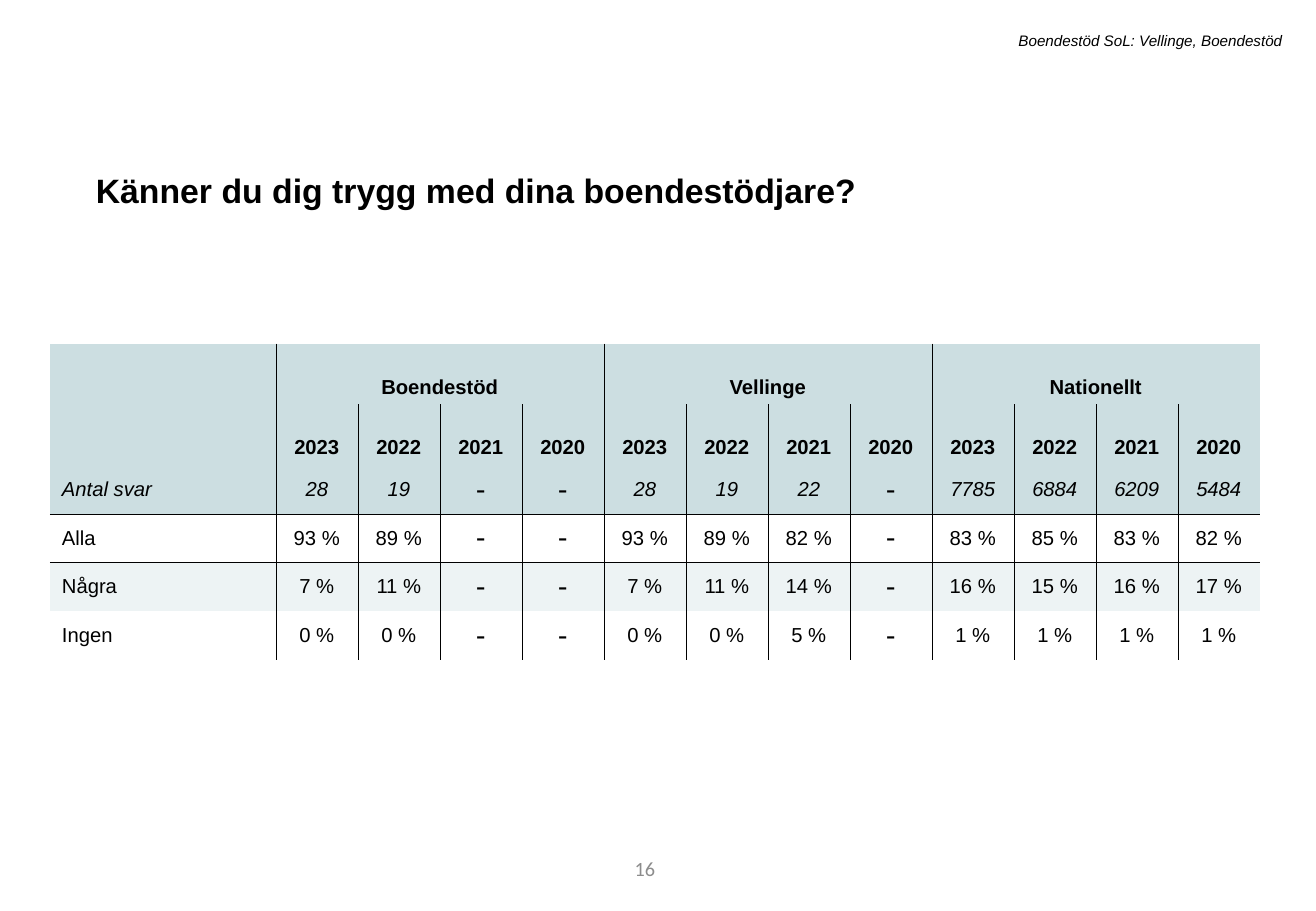
from lxml import etree
from pptx import Presentation
from pptx.dml.color import RGBColor
from pptx.enum.text import MSO_ANCHOR as ANCHOR, MSO_AUTO_SIZE as AUTO, PP_ALIGN as ALIGN
from pptx.oxml.ns import qn
from pptx.util import Inches, Pt

COLORS = {"text": "000000", "line": "000000", "number": "8C8C8C",
          "header": "CCDEE1", "band": "EDF3F4"}
NO_GRID_STYLE = "{2D5ABB26-0587-4C30-8999-92F81FD0307C}"

GROUPS = ["Boendestöd", "Vellinge", "Nationellt"]
YEARS = ["2023", "2022", "2021", "2020"]
ANSWERS = [
    ["Antal svar", "28", "19", "-", "-", "28", "19", "22", "-",
     "7785", "6884", "6209", "5484"],
    ["Alla", "93 %", "89 %", "-", "-", "93 %", "89 %", "82 %", "-",
     "83 %", "85 %", "83 %", "82 %"],
    ["Några", "7 %", "11 %", "-", "-", "7 %", "11 %", "14 %", "-",
     "16 %", "15 %", "16 %", "17 %"],
    ["Ingen", "0 %", "0 %", "-", "-", "0 %", "0 %", "5 %", "-",
     "1 %", "1 %", "1 %", "1 %"],
]
ROW_HEIGHTS = [0.5, 0.5, 0.4, 0.4, 0.4, 0.4]
ROW_FILLS = ["header", "header", "header", None, "band", None]
LABEL_WIDTH, VALUE_WIDTH = 1.86, 0.675
COUNT_ROW = 2


def add_run(p, text, size, font="Arial", color="text", bold=False, italic=False):
    r = p.add_run()
    r.text = text
    r.font.size, r.font.name = Pt(size), font
    r.font.bold, r.font.italic = bold, italic
    r.font.color.rgb = RGBColor.from_string(COLORS[color])


def add_text(slide, box, text, size, align=ALIGN.LEFT, anchor=ANCHOR.TOP,
             auto_size=AUTO.SHAPE_TO_FIT_TEXT, **style):
    sp = slide.shapes.add_textbox(*map(Inches, box))
    tf = sp.text_frame
    tf.word_wrap = True
    tf.auto_size = auto_size
    tf.vertical_anchor = anchor
    p = tf.paragraphs[0]
    p.alignment = align
    add_run(p, text, size, **style)
    return p


def set_borders(cell, sides):
    """Draw thin lines on the given sides, a subset of L, R, T and B in that order."""
    tc_pr = cell._tc.get_or_add_tcPr()
    for i, side in enumerate(sides):
        ln = etree.Element(qn(f"a:ln{side}"), w=str(Pt(0.25)))
        fill = etree.SubElement(ln, qn("a:solidFill"))
        etree.SubElement(fill, qn("a:srgbClr"), val=COLORS["line"])
        tc_pr.insert(i, ln)


def border_sides(row, col):
    # The top row is divided only between groups
    step = len(YEARS) if row == 0 else 1
    last = len(GROUPS) * len(YEARS)
    sides = ""
    if col > 0 and (col - 1) % step == 0:
        sides += "L"
    if col < last and col % step == 0:
        sides += "R"
    if row == COUNT_ROW + 1:
        sides += "T"
    if row == COUNT_ROW:
        sides += "B"
    return sides


def fill_cell(cell, text, row, col):
    cell.margin_top = cell.margin_bottom = Inches(0.05)
    is_heading = row < COUNT_ROW
    cell.vertical_anchor = ANCHOR.BOTTOM if is_heading else ANCHOR.MIDDLE
    if ROW_FILLS[row]:
        cell.fill.solid()
        cell.fill.fore_color.rgb = RGBColor.from_string(COLORS[ROW_FILLS[row]])
    else:
        cell.fill.background()
    set_borders(cell, border_sides(row, col))
    if not text:
        return
    p = cell.text_frame.paragraphs[0]
    p.alignment = ALIGN.CENTER if col else ALIGN.LEFT
    if text == "-":
        add_run(p, text, 18, font="Calibri")
    else:
        add_run(p, text, 12, bold=is_heading, italic=row == COUNT_ROW)


def add_answer_table(slide):
    group_row = [""]
    for group in GROUPS:
        group_row += [group] + [""] * (len(YEARS) - 1)
    rows = [group_row, [""] + YEARS * len(GROUPS)] + ANSWERS
    widths = [LABEL_WIDTH] + [VALUE_WIDTH] * (len(group_row) - 1)
    frame = slide.shapes.add_table(
        len(rows), len(widths), Inches(0.41), Inches(2.83),
        Inches(sum(widths)), Inches(sum(ROW_HEIGHTS)))
    table = frame.table
    table.first_row = table.horz_banding = False
    table._tbl.tblPr.find(qn("a:tableStyleId")).text = NO_GRID_STYLE
    for column, width in zip(table.columns, widths):
        column.width = Inches(width)
    for i, (height, texts) in enumerate(zip(ROW_HEIGHTS, rows)):
        table.rows[i].height = Inches(height)
        for j, text in enumerate(texts):
            fill_cell(table.cell(i, j), text, i, j)
    # Each group heading spans its years
    for first in range(1, len(widths), len(YEARS)):
        table.cell(0, first).merge(table.cell(0, first + len(YEARS) - 1))


def main():
    prs = Presentation()
    prs.slide_width, prs.slide_height = Inches(10.83), Inches(7.5)
    slide = prs.slides.add_slide(prs.slide_layouts[6])

    # Page number
    add_text(slide, (3.05, 6.95, 2.44, 0.4), "16", 12, ALIGN.RIGHT, ANCHOR.MIDDLE,
             AUTO.NONE, font="Calibri", color="number")

    # Question and survey name
    p = add_text(slide, (0.69, 1.28, 9.4, 0.47),
                 "Känner du dig trygg med dina boendestödjare?", 20, bold=True)
    p.line_spacing, p.space_before = 1.2, Pt(10)
    add_text(slide, (1.79, 0.21, 8.86, 0.25),
             "Boendestöd SoL: Vellinge, Boendestöd", 9, ALIGN.RIGHT, italic=True)

    # Answers by group and year
    add_answer_table(slide)
    prs.save("out.pptx")


if __name__ == "__main__":
    main()
